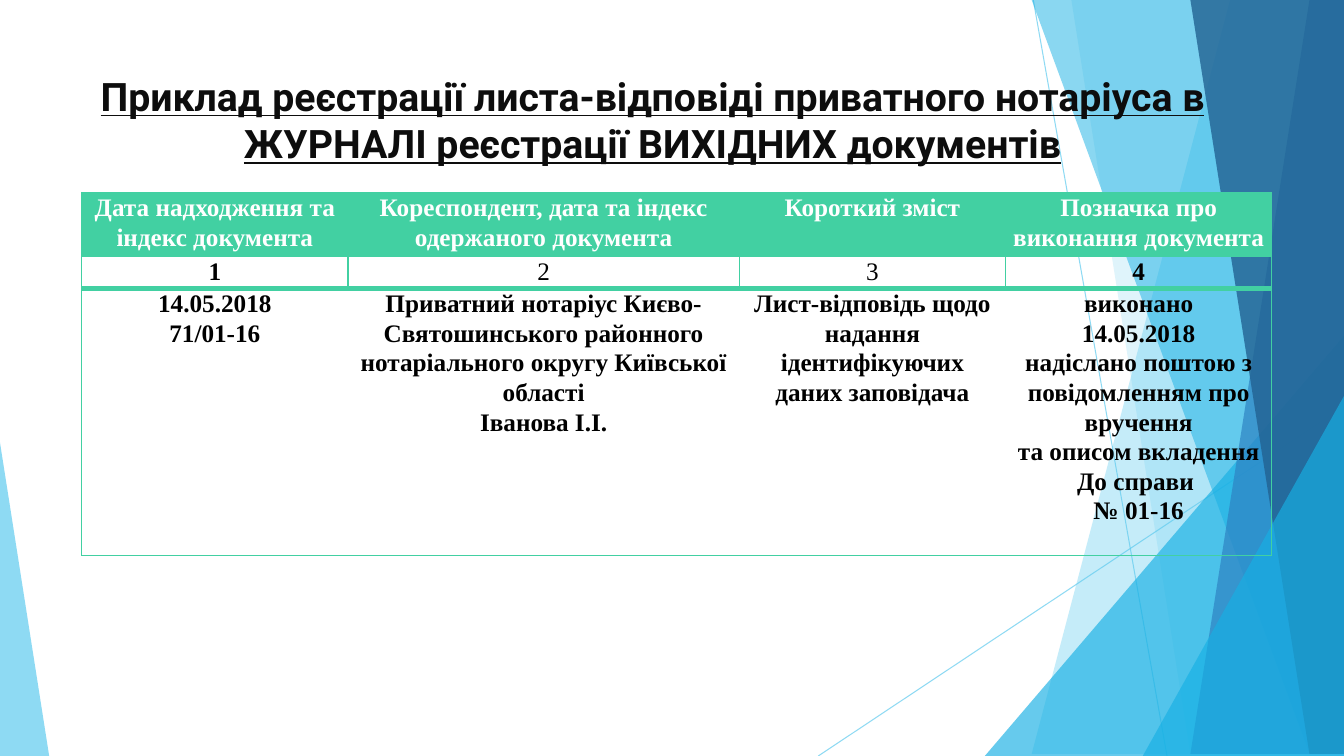
from pptx import Presentation
from pptx.dml.color import RGBColor
from pptx.enum.shapes import MSO_CONNECTOR, MSO_SHAPE
from pptx.enum.text import MSO_ANCHOR, PP_ALIGN
from pptx.oxml.ns import qn
from pptx.util import Cm, Pt
from lxml.etree import SubElement

WIDE, HIGH = 33.87, 19.05
SKY, BLUE, STEEL, NAVY = "5FCBEF", "17B0E4", "2E83C3", "226292"
GREEN = "42D0A2"


def color(code):
    return RGBColor.from_string(code)


def write(frame, text, font="Times New Roman", size=18, ink="000000",
          bold=True, under=False, space=1.0):
    """Fill a text frame, one centred paragraph for each line of text."""
    frame.word_wrap = True
    for i, line in enumerate(text.split("\n")):
        para = frame.add_paragraph() if i else frame.paragraphs[0]
        para.alignment = PP_ALIGN.CENTER
        para.line_spacing = space
        run = para.add_run()
        run.text = line
        run.font.name, run.font.size = font, Pt(size)
        run.font.bold, run.font.underline = bold, under
        run.font.color.rgb = color(ink)


class Deck:
    def __init__(self):
        self.show = Presentation()
        self.show.slide_width, self.show.slide_height = Cm(WIDE), Cm(HIGH)
        self.slide = self.show.slides.add_slide(self.show.slide_layouts[6])
        self.shapes = self.slide.shapes

    def fade(self, shape, alpha):
        for node in shape.element.spPr.iter(qn("a:srgbClr")):
            SubElement(node, qn("a:alpha")).set("val", str(alpha * 1000))

    def paint(self, shape, fill, alpha):
        shape.shadow.inherit = False
        shape.fill.solid()
        shape.fill.fore_color.rgb = color(fill)
        shape.line.fill.background()
        self.fade(shape, alpha)

    def line(self, x1, y1, x2, y2):
        link = self.shapes.add_connector(
            MSO_CONNECTOR.STRAIGHT, Cm(x1), Cm(y1), Cm(x2), Cm(y2))
        link.line.color.rgb = color(SKY)
        link.line.width = Pt(0.75)
        self.fade(link, 70)
        SubElement(link.element.spPr, qn("a:effectLst"))

    def band(self, top, foot, fill, alpha):
        """Full-height band from a slanted left side to the slide's edge."""
        path = self.shapes.build_freeform(top, 0, scale=Cm(1))
        path.add_line_segments([(WIDE, 0), (WIDE, HIGH), (foot, HIGH)])
        self.paint(path.convert_to_shape(), fill, alpha)

    def wedge(self, left, top, width, tip, fill, alpha):
        """Triangle that stands on the bottom edge."""
        shape = self.shapes.add_shape(
            MSO_SHAPE.ISOSCELES_TRIANGLE,
            Cm(left), Cm(top), Cm(width), Cm(HIGH - top))
        shape.adjustments[0] = tip
        self.paint(shape, fill, alpha)

    def text(self, left, top, width, height, words, **form):
        box = self.shapes.add_textbox(Cm(left), Cm(top), Cm(width), Cm(height))
        box.text_frame.vertical_anchor = MSO_ANCHOR.TOP
        write(box.text_frame, words, **form)

    def edge(self, cell, side, width):
        """Cell border; a width of 0 hides it."""
        props = cell._tc.get_or_add_tcPr()
        line = SubElement(props, qn("a:ln" + side), w=str(Pt(width)))
        if width:
            fill = SubElement(line, qn("a:solidFill"))
            SubElement(fill, qn("a:srgbClr")).set("val", GREEN)
        else:
            SubElement(line, qn("a:noFill"))

    def table(self, left, top, cols, rows, data):
        grid = self.shapes.add_table(
            len(rows), len(cols), Cm(left), Cm(top),
            Cm(sum(cols)), Cm(sum(rows))).table
        grid.first_row = grid.horz_banding = False
        for col, width in zip(grid.columns, cols):
            col.width = Cm(width)
        for row, height in zip(grid.rows, rows):
            row.height = Cm(height)
        last = len(cols) - 1
        for r, line in enumerate(data):
            for c, words in enumerate(line):
                cell = grid.cell(r, c)
                cell.margin_left = cell.margin_right = Cm(0.18)
                cell.margin_top = cell.margin_bottom = 0
                # Only the number row has inner vertical lines
                self.edge(cell, "L", int(r == 1 or c == 0))
                self.edge(cell, "R", int(r == 1 or c == last))
                self.edge(cell, "T", 4 if r == 2 else 1)
                self.edge(cell, "B", 4 if r == 1 else 1)
                if r == 0:
                    cell.fill.solid()
                    cell.fill.fore_color.rgb = color(GREEN)
                else:
                    cell.fill.background()
                write(cell.text_frame, words, space=1.06,
                      ink="000000" if r else "FFFFFF",
                      bold=words not in ("2", "3"))


def main():
    deck = Deck()

    # Backdrop
    deck.line(26.04, 0, 29.41, HIGH)
    deck.line(WIDE, 10.24, 20.62, HIGH)
    deck.band(31.19, 25.5, SKY, 36)
    deck.band(26.67, 30.02, SKY, 20)
    deck.wedge(24.82, 8.46, 9.05, 1, BLUE, 66)
    deck.band(25.93, 32.79, BLUE, 50)
    deck.band(33.1, 30.28, STEEL, 70)
    deck.band(30.38, 33.48, NAVY, 80)
    deck.wedge(28.8, 9.98, 5.07, 1, BLUE, 66)
    deck.wedge(0, 11.15, 1.24, 0, SKY, 70)

    # Title
    deck.text(1.88, 1.7, 29.13, 3.66,
              "Приклад реєстрації листа-відповіді приватного нотаріуса в "
              "ЖУРНАЛІ реєстрації ВИХІДНИХ документів",
              font="Roboto", size=28, ink="0D0D0D", under=True)

    # Journal
    deck.table(2.06, 4.85, [6.71, 9.86, 6.71, 6.71], [1.47, 0.74, 6.73], [
        ["Дата надходження та індекс документа",
         "Кореспондент, дата та індекс одержаного документа",
         "Короткий зміст",
         "Позначка про виконання документа"],
        ["1", "2", "3", "4"],
        ["14.05.2018\n71/01-16",
         "Приватний нотаріус Києво-Святошинського районного "
         "нотаріального округу Київської області\nІванова І.І.",
         "Лист-відповідь щодо надання ідентифікуючих даних заповідача",
         "виконано\n14.05.2018\n"
         "надіслано поштою з повідомленням про вручення\n"
         "та описом вкладення\nДо справи \n№ 01-16"],
    ])

    deck.show.save("out.pptx")


if __name__ == "__main__":
    main()
